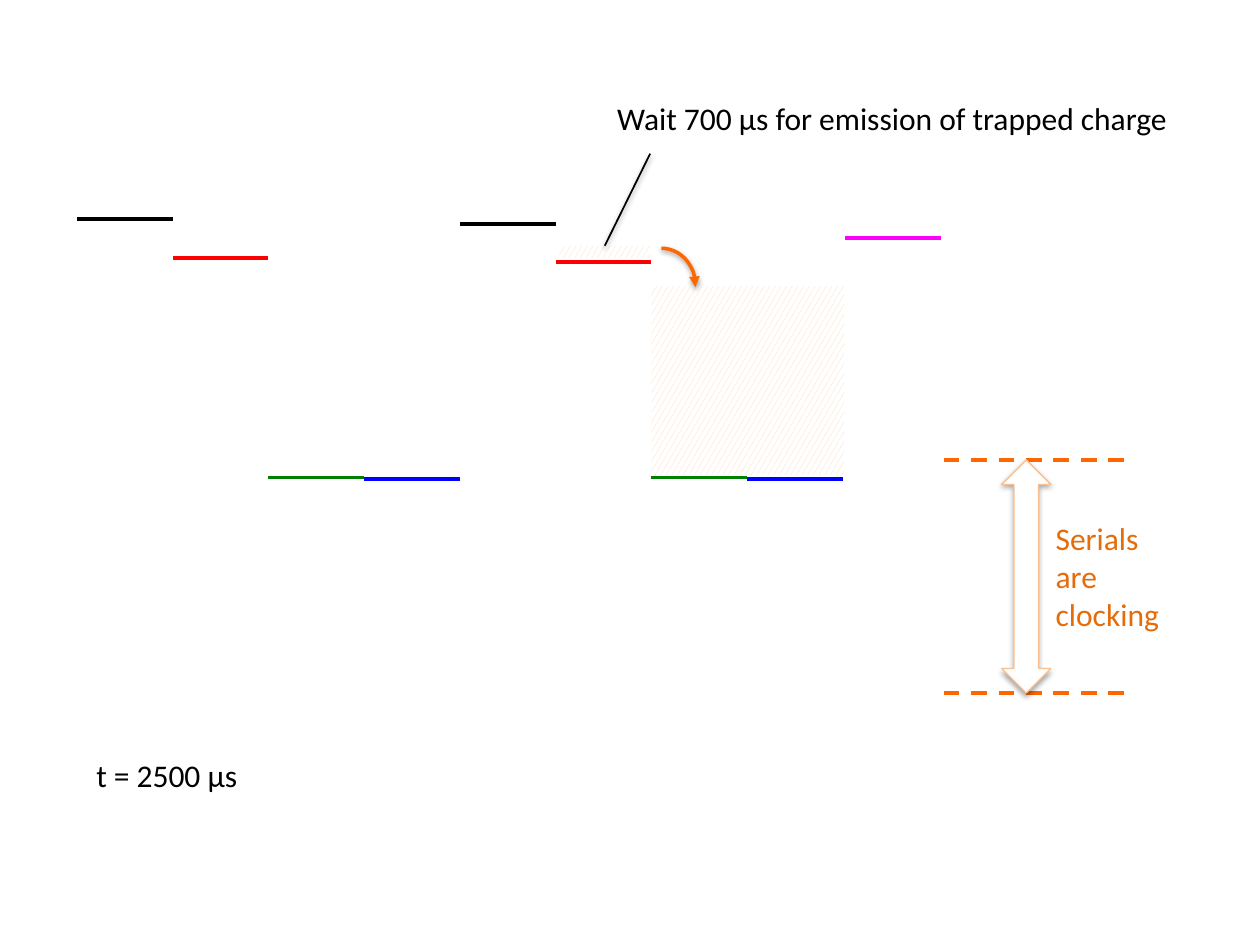
from pptx import Presentation
from pptx.dml.color import RGBColor
from pptx.enum.dml import MSO_LINE, MSO_PATTERN
from pptx.enum.shapes import MSO_CONNECTOR, MSO_SHAPE
from pptx.enum.text import MSO_AUTO_SIZE
from pptx.oxml import parse_xml
from pptx.oxml.ns import nsdecls, qn
from pptx.util import Inches, Pt

COLORS = {
    "black": "000000", "white": "FFFFFF", "red": "FF0000",
    "green": "008000", "blue": "0000FF", "magenta": "FF00FF",
    "orange": "FF6600", "label": "E46C0A", "peach": "FCD5B5",
    "outline": "FAC090",
}
LEVEL_WIDTH = 0.76
PIXEL_STARTS = (0.61, 3.65)
PHASES = (
    ("black", (1.74, 1.78)),
    ("red", (2.05, 2.08)),
    ("green", (3.79, 3.79)),
    ("blue", (3.8, 3.8)),
)


def color(name):
    return RGBColor.from_string(COLORS[name])


def set_effects(shape, opacity=0, distance=0):
    properties = shape.element.spPr
    for old in properties.findall(qn("a:effectLst")):
        properties.remove(old)
    shadow = ""
    if opacity:
        shadow = (
            f'<a:outerShdw blurRad="{Pt(3.1)}" dist="{Pt(distance)}" dir="5400000"'
            f' rotWithShape="0"><a:srgbClr val="{COLORS["black"]}">'
            f'<a:alpha val="{opacity * 1000}"/></a:srgbClr></a:outerShdw>'
        )
    properties.append(parse_xml(f'<a:effectLst {nsdecls("a")}>{shadow}</a:effectLst>'))


def set_line(shape, name, width):
    shape.line.color.rgb = color(name)
    shape.line.width = Pt(width)


def add_line(shapes, start, end, name, width=2.25, dash=None, **shadow):
    line = shapes.add_connector(
        MSO_CONNECTOR.STRAIGHT, *(Inches(value) for value in (*start, *end)))
    set_line(line, name, width)
    if dash:
        line.line.dash_style = dash
    set_effects(line, **shadow)
    return line


def add_level(shapes, left, top, name, width=LEVEL_WIDTH, dash=None):
    return add_line(shapes, (left, top), (left + width, top), name, dash=dash)


def add_preset(page, kind, *place):
    shape = page.shapes.add_shape(kind, *(Inches(value) for value in place))
    shape.shadow.inherit = False
    return shape


def add_charge(page, *place):
    charge = add_preset(page, MSO_SHAPE.RECTANGLE, *place)
    charge.fill.patterned()
    charge.fill.pattern = MSO_PATTERN.LARGE_CONFETTI
    charge.fill.fore_color.rgb = color("peach")
    charge.fill.back_color.rgb = color("white")
    charge.line.fill.background()


def add_phase(page, index, name, tops):
    group = page.shapes.add_group_shape()
    for start, top in zip(PIXEL_STARTS, tops):
        add_level(group.shapes, start + index * LEVEL_WIDTH, top, name)


def add_flow_arc(page, *place):
    arc = add_preset(page, MSO_SHAPE.ARC, *place)
    arc.adjustments[0] = 162
    arc.adjustments[1] = 1.65
    arc.fill.background()
    set_line(arc, "orange", 2)
    arc.element.spPr.find(qn("a:ln")).append(
        parse_xml(f'<a:tailEnd {nsdecls("a")} type="triangle"/>'))
    set_effects(arc, opacity=38, distance=1.6)


def add_clock_arrow(page, *place):
    arrow = add_preset(page, MSO_SHAPE.UP_DOWN_ARROW, *place)
    arrow.fill.solid()
    arrow.fill.fore_color.rgb = color("white")
    set_line(arrow, "outline", 0.75)
    set_effects(arrow, opacity=35, distance=1.8)


def add_text(page, text, place, size=18, name="black", font="Calibri"):
    box = page.shapes.add_textbox(*(Inches(value) for value in place))
    box.text_frame.word_wrap = True
    box.text_frame.auto_size = MSO_AUTO_SIZE.SHAPE_TO_FIT_TEXT
    span = box.text_frame.paragraphs[0].add_run()
    span.text = text
    span.font.size = Pt(size)
    span.font.name = font
    span.font.color.rgb = color(name)
    return box


def main():
    deck = Presentation()
    deck.slide_width, deck.slide_height = Inches(10), Inches(7.5)
    page = deck.slides.add_slide(deck.slide_layouts[6])

    add_charge(page, 5.17, 2.27, 1.53, 1.5)
    for index, (name, tops) in enumerate(PHASES):
        add_phase(page, index, name, tops)
    add_charge(page, 4.44, 1.95, 0.72, 0.1)
    add_flow_arc(page, 4.98, 1.97, 0.54, 0.59)

    add_text(page, "Wait 700 µs for emission of trapped charge", (4.8, 0.74, 4.84, 0.4))
    add_line(page.shapes, (5.16, 1.22), (4.8, 1.95), "black", width=1,
             opacity=38, distance=1.6)
    add_level(page.shapes, 6.71, 1.89, "magenta")
    add_text(page, " t = 2500 µs", (0.61, 5.95, 5, 0.4))

    for top in (5.5, 3.65):
        add_level(page.shapes, 7.49, top, "orange", width=2 * LEVEL_WIDTH,
                  dash=MSO_LINE.DASH)
    add_clock_arrow(page, 7.95, 3.65, 0.39, 1.85)
    add_text(page, "Serials are clocking", (8.28, 4.07, 1.23, 1.01), name="label")

    deck.save("out.pptx")


if __name__ == "__main__":
    main()
